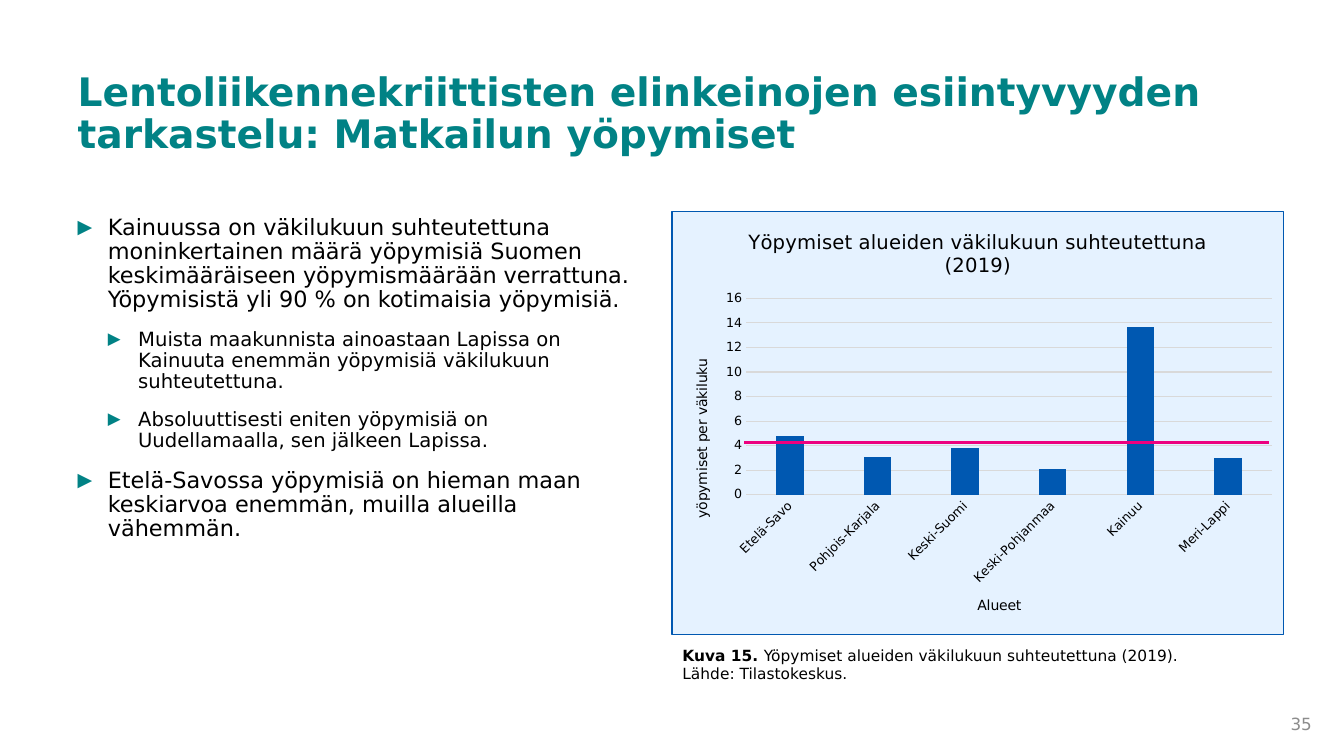
from lxml.etree import SubElement
from pptx import Presentation
from pptx.chart.data import CategoryChartData as ChartData
from pptx.dml.color import RGBColor as RGB
from pptx.enum.chart import XL_CHART_TYPE as Kind, XL_TICK_MARK as Tick
from pptx.enum.shapes import MSO_CONNECTOR as Line
from pptx.enum.text import MSO_ANCHOR as Anchor, MSO_AUTO_SIZE as Fit, PP_ALIGN as Align
from pptx.oxml import parse_xml
from pptx.oxml.ns import nsdecls, qn
from pptx.util import Emu, Pt

PX = 9144
FACE = "DejaVu Sans"
TEAL = RGB(0x01, 0x82, 0x85)
BLACK = RGB(0, 0, 0)
GRAY = RGB(0x8C, 0x8C, 0x8C)
GRID = RGB(0xD9, 0xD9, 0xD9)
BLUE = RGB(0x00, 0x58, 0xB1)
PALE = RGB(0xE5, 0xF2, 0xFF)
PINK = RGB(0xEC, 0x01, 0x7F)

TITLE = "Lentoliikennekriittisten elinkeinojen esiintyvyyden tarkastelu: Matkailun yöpymiset"
POINTS = [
    (0, "Kainuussa on väkilukuun suhteutettuna moninkertainen määrä yöpymisiä Suomen "
        "keskimääräiseen yöpymismäärään verrattuna. Yöpymisistä yli 90 % on kotimaisia yöpymisiä."),
    (1, "Muista maakunnista ainoastaan Lapissa on Kainuuta enemmän yöpymisiä väkilukuun suhteutettuna."),
    (1, "Absoluuttisesti eniten yöpymisiä on Uudellamaalla, sen jälkeen Lapissa."),
    (0, "Etelä-Savossa yöpymisiä on hieman maan keskiarvoa enemmän, muilla alueilla vähemmän."),
]
STAYS = {"Etelä-Savo": 4.8, "Pohjois-Karjala": 3.1, "Keski-Suomi": 3.8,
         "Keski-Pohjanmaa": 2.1, "Kainuu": 13.7, "Meri-Lappi": 3}


def px(*nums):
    """Turn px lengths into EMU."""
    return [Emu(n * PX) for n in nums]


def put(item, **vals):
    """Set several attributes of one object."""
    for key, val in vals.items():
        setattr(item, key, val)


def style(font, size, color=BLACK, bold=False):
    """Format a font."""
    put(font, name=FACE, size=Pt(size), bold=bold)
    font.color.rgb = color


def place(shape, box):
    """Move a shape to its box."""
    put(shape, **dict(zip(("left", "top", "width", "height"), px(*box))))


def bullet(para):
    """Give a paragraph a teal arrow bullet."""
    props = para._p.get_or_add_pPr()
    props.set("marL", str(30 * PX * (para.level + 1)))
    props.set("indent", str(-30 * PX))
    tint = SubElement(props, qn("a:buClr"))
    SubElement(tint, qn("a:srgbClr"), val=str(TEAL))
    SubElement(props, qn("a:buSzPct"), val="85000")
    SubElement(props, qn("a:buFont"), typeface=FACE)
    SubElement(props, qn("a:buChar"), char="▶")


def head(slide, box):
    """Fill the title placeholder."""
    shape = slide.shapes.title
    place(shape, box)
    frame = shape.text_frame
    frame.text = TITLE
    put(frame, vertical_anchor=Anchor.TOP, word_wrap=True, auto_size=Fit.NONE)
    para = frame.paragraphs[0]
    put(para, alignment=Align.LEFT, line_spacing=0.9)
    style(para.runs[0].font, 28, TEAL, True)


def points(slide, box):
    """Fill the body placeholder with the bullet list."""
    shape = slide.placeholders[1]
    place(shape, box)
    frame = shape.text_frame
    frame.text = "\n".join(text for _, text in POINTS)
    put(frame, vertical_anchor=Anchor.TOP, word_wrap=True, auto_size=Fit.NONE,
        margin_right=Emu(5 * PX))
    for i, (para, (level, _)) in enumerate(zip(frame.paragraphs, POINTS)):
        para.level = level
        bullet(para)
        put(para, line_spacing=0.9, space_before=Pt(12 if i else 0), space_after=Pt(0))
        style(para.runs[0].font, 14 if level else 16)


def note(slide, box, parts, size, color=BLACK, **form):
    """Add a text box made of (text, bold) parts."""
    shape = slide.shapes.add_textbox(*px(*box))
    frame = shape.text_frame
    put(frame, word_wrap=True, vertical_anchor=form.get("anchor", Anchor.TOP))
    para = frame.paragraphs[0]
    para.alignment = form.get("align", Align.LEFT)
    for text, bold in parts:
        run = para.add_run()
        run.text = text
        style(run.font, size, color, bold)


def lay(node, spot, **sides):
    """Fix the place of a chart part as shares of the chart."""
    old = node.find(qn("c:layout"))
    if old is not None:
        node.remove(old)
    rows = "".join(f'<c:{key} val="{val}"/>' for key, val in sides.items())
    node.insert(spot, parse_xml(
        f'<c:layout {nsdecls("c")}><c:manualLayout>{rows}</c:manualLayout></c:layout>'))


def label(owner, text, size, x, y, turn=0):
    """Write and place the title of a chart or an axis."""
    title = owner.chart_title if hasattr(owner, "chart_title") else owner.axis_title
    frame = title.text_frame
    frame.text = text
    style(frame.paragraphs[0].runs[0].font, size)
    frame._txBody.bodyPr.set("rot", str(turn * 60000))
    lay(frame._txBody.getparent().getparent(), 1, xMode="edge", yMode="edge", x=x, y=y)


def graph(slide, box):
    """Add the column chart with the mean line across it."""
    data = ChartData()
    data.categories = list(STAYS)
    data.add_series("Series 1", list(STAYS.values()))
    chart = slide.shapes.add_chart(Kind.COLUMN_CLUSTERED, *px(*box), data).chart
    chart.has_legend = False
    style(chart.font, 10)
    root = chart._chartSpace
    root.find(qn("c:chart")).addnext(parse_xml(
        f'<c:spPr {nsdecls("c", "a")}><a:solidFill><a:srgbClr val="{PALE}"/></a:solidFill>'
        f'<a:ln w="9525"><a:solidFill><a:srgbClr val="{BLUE}"/></a:solidFill></a:ln></c:spPr>'))
    plot = chart.plots[0]
    put(plot, gap_width=219, overlap=-27, vary_by_categories=False)
    fill = plot.series[0].format.fill
    fill.solid()
    fill.fore_color.rgb = BLUE
    cat, val = chart.category_axis, chart.value_axis
    for axis in (cat, val):
        put(axis, major_tick_mark=Tick.NONE, minor_tick_mark=Tick.NONE)
        style(axis.tick_labels.font, 9)
    put(val, minimum_scale=0, maximum_scale=16, major_unit=2, has_major_gridlines=True)
    put(val.tick_labels, number_format="0", number_format_is_linked=False)
    val.format.line.fill.background()
    for line in (cat.format.line, val.major_gridlines.format.line):
        line.color.rgb = GRID
        line.width = Pt(0.75)
    cat._element.find(qn("c:txPr")).find(qn("a:bodyPr")).set("rot", "-2700000")
    label(chart, "Yöpymiset alueiden väkilukuun suhteutettuna (2019)", 14, 0.119, 0.033)
    label(cat, "Alueet", 10, 0.495, 0.904)
    label(val, "yöpymiset per väkiluku", 10, 0.03, 0.343, -90)
    lay(root.find(qn("c:chart")).find(qn("c:plotArea")), 0, layoutTarget="inner",
        xMode="edge", yMode="edge", x=0.121, y=0.206, w=0.859, h=0.464)
    left, top = box[:2]
    mean = slide.shapes.add_connector(
        Line.STRAIGHT, *px(left + 72, top + 230, left + 593, top + 230))
    mean.line.color.rgb = PINK
    mean.line.width = Pt(1.5)
    SubElement(mean._element.spPr, qn("a:effectLst"))


def main():
    """Build and save the slide."""
    deck = Presentation()
    put(deck, slide_width=Emu(1333 * PX), slide_height=Emu(750 * PX))
    slide = deck.slides.add_slide(deck.slide_layouts[1])
    head(slide, (67, 67, 1175, 121))
    points(slide, (67, 209, 567, 467))
    note(slide, (1236, 704, 75, 28), [("35", False)], 12, GRAY,
         anchor=Anchor.MIDDLE, align=Align.RIGHT)
    graph(slide, (666, 209, 608, 421))
    note(slide, (667, 636, 550, 47), [
        ("Kuva 15. ", True),
        ("Yöpymiset alueiden väkilukuun suhteutettuna (2019). Lähde: Tilastokeskus.", False)], 11)
    deck.save("out.pptx")


if __name__ == "__main__":
    main()
